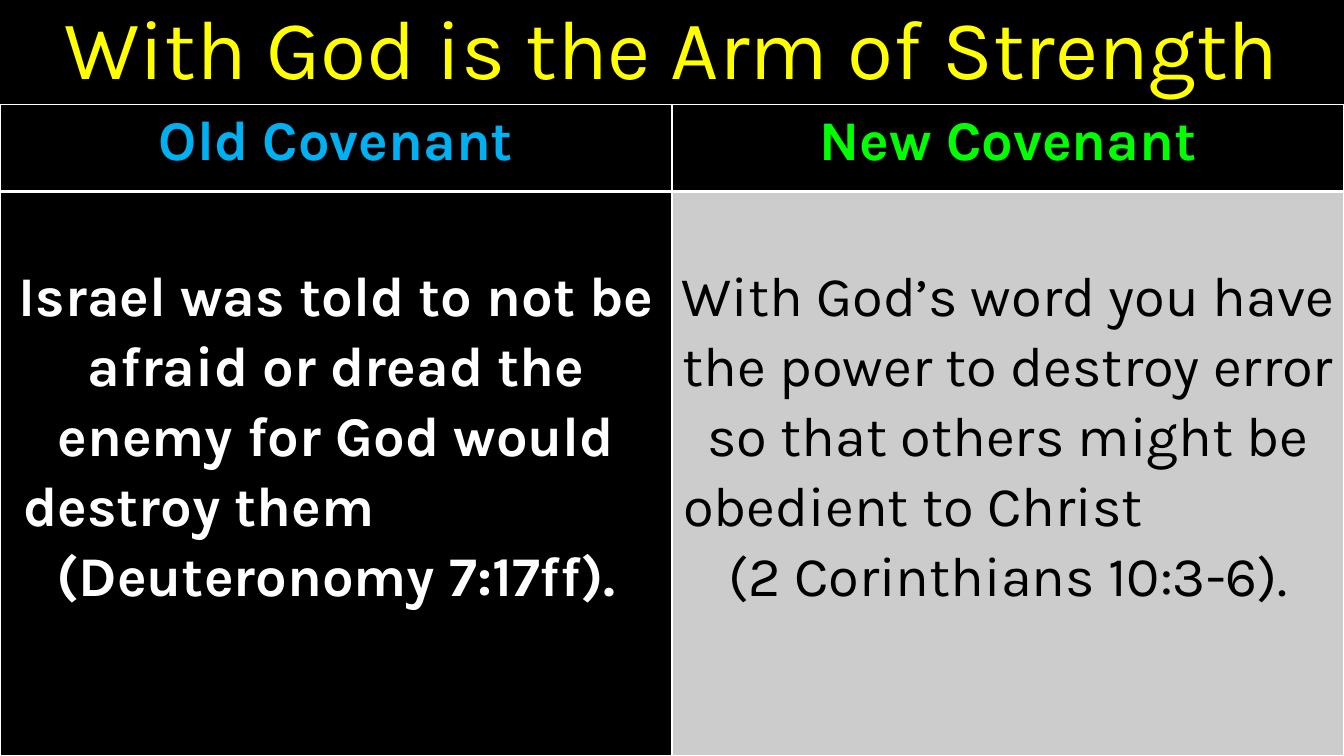
from lxml import etree
from pptx import Presentation
from pptx.dml.color import RGBColor
from pptx.enum.text import MSO_ANCHOR, PP_ALIGN
from pptx.oxml.ns import qn
from pptx.util import Inches, Pt

CENTER, LEFT = PP_ALIGN.CENTER, PP_ALIGN.LEFT
TOP, MIDDLE = MSO_ANCHOR.TOP, MSO_ANCHOR.MIDDLE
BLACK, WHITE, GRAY = "000000", "FFFFFF", "CCCCCC"
YELLOW, BLUE, GREEN = "FFFF00", "00B0F0", "00FF00"
WIDTH, HEIGHT = 13.33, 7.5
HEAD = 0.86
TABLE_TOP = 1.04


def color(code):
    return RGBColor.from_string(code)


def write(par, text, size=40, ink=WHITE, bold=False, align=CENTER, lead=1.07, indent=0):
    par.alignment = align
    par.line_spacing = lead
    if indent:
        props = par._p.get_or_add_pPr()
        props.set("marL", str(Inches(indent)))
        props.set("indent", "0")
    run = par.add_run()
    run.text = text
    font = run.font
    font.name, font.size, font.bold = "Karla", Pt(size), bold
    font.color.rgb = color(ink)


def border(cell, side, width):
    line = etree.SubElement(cell._tc.get_or_add_tcPr(), qn("a:ln" + side), w=str(Pt(width)))
    fill = etree.SubElement(line, qn("a:solidFill"))
    etree.SubElement(fill, qn("a:srgbClr"), val=WHITE)


class Deck:
    def __init__(self):
        self.file = Presentation()
        self.file.slide_width = Inches(WIDTH)
        self.file.slide_height = Inches(HEIGHT)
        self.slide = self.file.slides.add_slide(self.file.slide_layouts[6])
        back = self.slide.background.fill
        back.solid()
        back.fore_color.rgb = color(BLACK)

    def title(self, text):
        box = self.slide.shapes.add_textbox(0, 0, Inches(WIDTH), Inches(1.03))
        frame = box.text_frame
        frame.word_wrap = True
        frame.vertical_anchor = MIDDLE
        write(frame.paragraphs[0], text, size=60, ink=YELLOW, lead=0.9)

    def table(self, rows, heights):
        frame = self.slide.shapes.add_table(
            len(rows), len(rows[0]), 0, Inches(TABLE_TOP), Inches(WIDTH), Inches(sum(heights)))
        table = frame.table
        table.first_row = table.horz_banding = False
        for r, row in enumerate(rows):
            table.rows[r].height = Inches(heights[r])
            for c, item in enumerate(row):
                self.cell(table.cell(r, c), r == 0, **item)

    def cell(self, cell, head, lines, fill, ink, bold, indent=0):
        widths = {"L": 1, "R": 1, "T": 1 if head else 3, "B": 3 if head else 1}
        for side, width in widths.items():
            border(cell, side, width)
        cell.fill.solid()
        cell.fill.fore_color.rgb = color(fill)
        cell.margin_left = cell.margin_right = Inches(0.07)
        cell.margin_top = Inches(0 if head else 0.69)
        cell.margin_bottom = 0
        cell.vertical_anchor = TOP
        frame = cell.text_frame
        for i, (text, align) in enumerate(lines):
            par = frame.add_paragraph() if i else frame.paragraphs[0]
            write(par, text, ink=ink, bold=bold, align=align,
                  indent=indent if align == LEFT else 0)


def main():
    deck = Deck()
    deck.title("With God is the Arm of Strength")
    heads = [
        dict(lines=[("Old Covenant", CENTER)], fill=BLACK, ink=BLUE, bold=True),
        dict(lines=[("New Covenant", CENTER)], fill=BLACK, ink=GREEN, bold=True),
    ]
    old = [
        ("Israel was told to not be afraid or dread the enemy for God would", CENTER),
        ("destroy them", LEFT),
        ("(Deuteronomy 7:17ff).", CENTER),
    ]
    new = [
        ("With God’s word you have the power to destroy error so that others might be", CENTER),
        ("obedient to Christ", LEFT),
        ("(2 Corinthians 10:3-6).", CENTER),
    ]
    bodies = [
        dict(lines=old, fill=BLACK, ink=WHITE, bold=True, indent=0.16),
        dict(lines=new, fill=GRAY, ink=BLACK, bold=False, indent=0.04),
    ]
    deck.table([heads, bodies], [HEAD, HEIGHT - TABLE_TOP - HEAD])
    deck.file.save("out.pptx")


if __name__ == "__main__":
    main()
